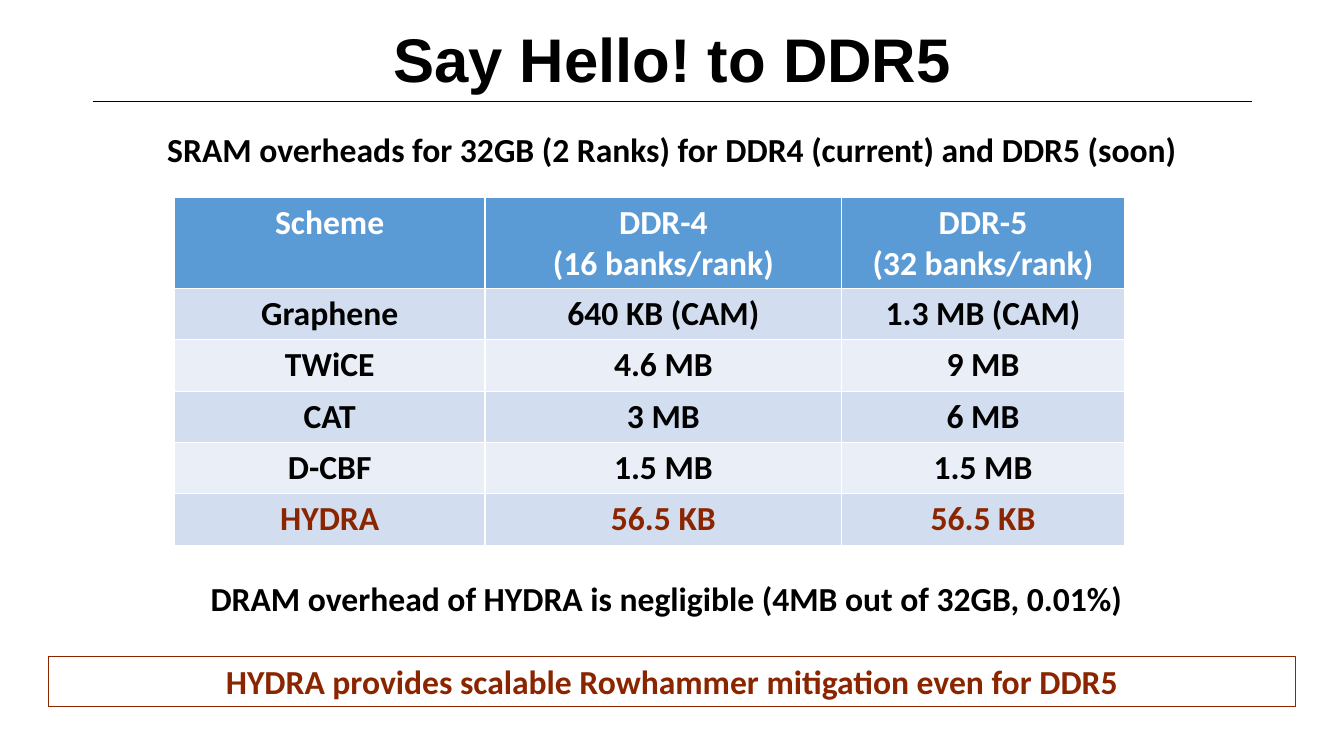
from lxml.etree import SubElement
from pptx import Presentation
from pptx.dml.color import RGBColor
from pptx.enum.shapes import MSO_CONNECTOR, MSO_SHAPE
from pptx.enum.text import MSO_ANCHOR, PP_ALIGN
from pptx.oxml.ns import qn
from pptx.util import Inches, Pt

# Content
TITLE = "Say Hello! to DDR5"
CAPTION = "SRAM overheads for 32GB (2 Ranks) for DDR4 (current) and DDR5 (soon)"
NOTE = "DRAM overhead of HYDRA is negligible (4MB out of 32GB, 0.01%)"
TAKEAWAY = "HYDRA provides scalable Rowhammer mitigation even for DDR5"
OVERHEADS = [
    ("Scheme", "DDR-4\n(16 banks/rank)", "DDR-5\n(32 banks/rank)"),
    ("Graphene", "640 KB (CAM)", "1.3 MB (CAM)"),
    ("TWiCE", "4.6 MB", "9 MB"),
    ("CAT", "3 MB", "6 MB"),
    ("D-CBF", "1.5 MB", "1.5 MB"),
    ("HYDRA", "56.5 KB", "56.5 KB"),
]
COLUMN_WIDTHS = (3.08, 3.54, 2.8)
HEADER_HEIGHT, ROW_HEIGHT = 0.83, 0.51

BLACK = RGBColor(0x00, 0x00, 0x00)
WHITE = RGBColor(0xFF, 0xFF, 0xFF)
RUST = RGBColor(0x8B, 0x25, 0x00)
HEADER_BLUE = RGBColor(0x5B, 0x9B, 0xD5)
BAND_DARK = RGBColor(0xD2, 0xDE, 0xEF)
BAND_LIGHT = RGBColor(0xEA, 0xEF, 0xF7)


def write(frame, text, color=BLACK, size=24, font="Calibri", spacing=None):
    """Fill a text frame with bold, centred paragraphs, one per line."""
    for index, line in enumerate(text.split("\n")):
        para = frame.add_paragraph() if index else frame.paragraphs[0]
        para.alignment = PP_ALIGN.CENTER
        if spacing:
            para.line_spacing = spacing
        span = para.add_run()
        span.text = line
        span.font.name = font
        span.font.size = Pt(size)
        span.font.bold = True
        span.font.color.rgb = color


def add_text(page, text, left, top, width, height, anchor=MSO_ANCHOR.TOP, **style):
    box = page.shapes.add_textbox(*map(Inches, (left, top, width, height)))
    box.text_frame.word_wrap = True
    box.text_frame.vertical_anchor = anchor
    write(box.text_frame, text, **style)


def add_rule(page):
    rule = page.shapes.add_connector(
        MSO_CONNECTOR.STRAIGHT, Inches(0.92), Inches(1.01), Inches(12.42), Inches(1.01))
    rule.line.color.rgb = BLACK
    rule.line.width = Pt(0.5)
    SubElement(rule._element.spPr, qn("a:effectLst"))


def add_overheads(page):
    height = HEADER_HEIGHT + ROW_HEIGHT * (len(OVERHEADS) - 1)
    table = page.shapes.add_table(
        len(OVERHEADS), len(COLUMN_WIDTHS), Inches(1.73), Inches(1.96),
        Inches(sum(COLUMN_WIDTHS)), Inches(height)).table
    for column, width in zip(table.columns, COLUMN_WIDTHS):
        column.width = Inches(width)
    last = len(OVERHEADS) - 1
    for number, values in enumerate(OVERHEADS):
        table.rows[number].height = Inches(ROW_HEIGHT if number else HEADER_HEIGHT)
        band = BAND_DARK if number % 2 else BAND_LIGHT
        for position, value in enumerate(values):
            cell = table.cell(number, position)
            cell.fill.solid()
            cell.fill.fore_color.rgb = band if number else HEADER_BLUE
            write(cell.text_frame, value, color={0: WHITE, last: RUST}.get(number, BLACK))


def add_takeaway(page):
    box = page.shapes.add_shape(
        MSO_SHAPE.RECTANGLE, Inches(0.48), Inches(6.51), Inches(12.37), Inches(0.5))
    box.shadow.inherit = False
    box.fill.background()
    box.line.color.rgb = RUST
    box.line.width = Pt(0.75)
    box.text_frame.word_wrap = True
    box.text_frame.vertical_anchor = MSO_ANCHOR.TOP
    write(box.text_frame, TAKEAWAY, color=RUST)


def main():
    deck = Presentation()
    deck.slide_width, deck.slide_height = Inches(13.33), Inches(7.5)
    page = deck.slides.add_slide(deck.slide_layouts[6])

    # Heading
    add_rule(page)
    add_text(page, TITLE, 0.7, 0.23, 11.94, 0.78, anchor=MSO_ANCHOR.MIDDLE,
             size=44, font="Arial", spacing=0.9)

    # Comparison
    add_text(page, CAPTION, 1.02, 1.23, 11.29, 0.5)
    add_overheads(page)

    # Conclusion
    add_text(page, NOTE, 1.02, 5.68, 11.18, 0.5)
    add_takeaway(page)
    deck.save("out.pptx")


if __name__ == "__main__":
    main()
